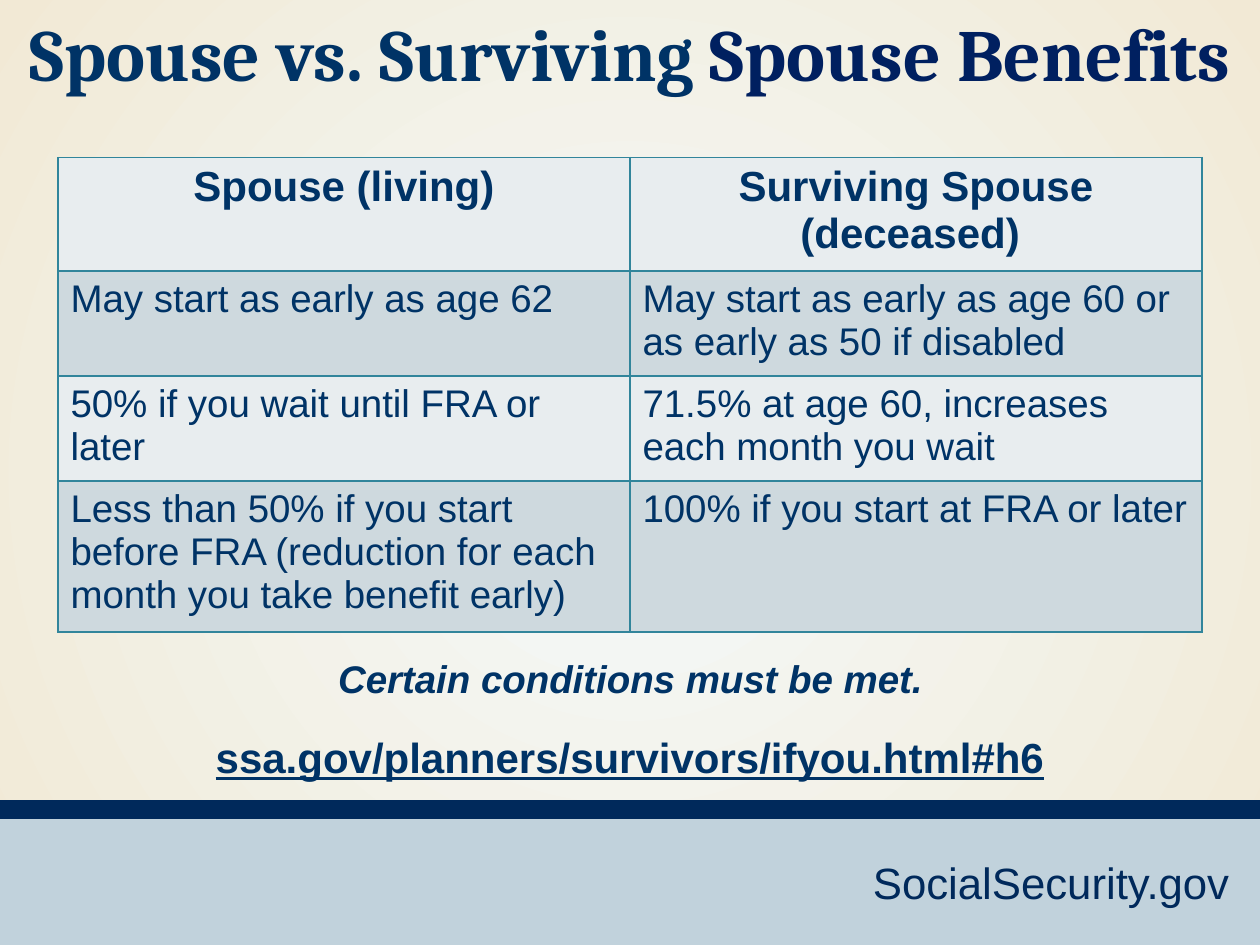
from pptx import Presentation
from pptx.dml.color import RGBColor
from pptx.enum.shapes import MSO_SHAPE
from pptx.enum.text import MSO_ANCHOR, PP_ALIGN
from pptx.oxml import parse_xml
from pptx.oxml.ns import nsdecls, qn
from pptx.util import Inches, Pt

COLORS = {
    "glow": "F3FAFB", "cream": "F2E9D5", "footer": "C1D2DC", "stripe": "00295B",
    "text": "003366", "title_end": "002060", "border": "31859B",
    "light": "E8EDEF", "dark": "CED9DE",
}


def rgb(name):
    return RGBColor.from_string(COLORS[name])


def write(frame, text, size=22, font="Arial", color="text", bold=False,
          italic=False, underline=False, align=PP_ALIGN.LEFT):
    frame.word_wrap = True
    paragraph = frame.paragraphs[0]
    paragraph.alignment = align
    run = paragraph.add_run()
    run.text = text
    run.font.size = Pt(size)
    run.font.name = font
    run.font.bold = bold
    run.font.italic = italic
    run.font.underline = underline
    run.font.color.rgb = rgb(color)


prs = Presentation()
prs.slide_width, prs.slide_height = Inches(10), Inches(7.5)
slide = prs.slides.add_slide(prs.slide_layouts[6])
shapes = slide.shapes

backdrop = slide.background.fill
backdrop.gradient()
for stop, color in zip(backdrop.gradient_stops, ("glow", "cream")):
    stop.color.rgb = rgb(color)
gradient = slide.element.find(".//" + qn("a:gradFill"))
gradient.replace(gradient.find(qn("a:lin")), parse_xml(
    f'<a:path {nsdecls("a")} path="circle">'
    '<a:fillToRect l="50000" t="50000" r="50000" b="50000"/></a:path>'))

for top, height, color in ((6.45, 1.05, "footer"), (6.35, 0.15, "stripe")):
    band = shapes.add_shape(MSO_SHAPE.RECTANGLE, 0, Inches(top), Inches(10), Inches(height))
    band.shadow.inherit = False
    band.fill.solid()
    band.fill.fore_color.rgb = rgb(color)
    band.line.fill.background()

site = shapes.add_textbox(Inches(6.83), Inches(6.74), Inches(3.07), Inches(0.52))
write(site.text_frame, "SocialSecurity.gov", size=25, color="stripe")

title = shapes.add_textbox(0, 0, Inches(10), Inches(0.82)).text_frame
title.vertical_anchor = MSO_ANCHOR.MIDDLE
for text, color in (("Spouse vs. Surviving ", "text"), ("Spouse Benefits", "title_end")):
    write(title, text, size=42, font="Cambria", color=color, bold=True, align=PP_ALIGN.CENTER)

comparison = [
    ("Spouse (living)", "Surviving Spouse (deceased) "),
    ("May start as early as age 62",
     "May start as early as age 60 or as early as 50 if disabled"),
    ("50% if you wait until FRA or later",
     "71.5% at age 60, increases each month you wait"),
    ("Less than 50% if you start before FRA (reduction for each month you take benefit early)",
     "100% if you start at FRA or later"),
]
row_heights = (0.85, 0.78, 0.78, 1.13)
benefits = shapes.add_table(len(comparison), 2, Inches(0.46), Inches(1.25),
                            Inches(9.08), Inches(sum(row_heights))).table
benefits.first_row = benefits.horz_banding = False
for r, (entries, height) in enumerate(zip(comparison, row_heights)):
    benefits.rows[r].height = Inches(height)
    header = r == 0
    for c, text in enumerate(entries):
        cell = benefits.cell(r, c)
        cell.fill.solid()
        cell.fill.fore_color.rgb = rgb("dark" if r % 2 else "light")
        write(cell.text_frame, text, size=24 if header else 22, bold=header,
              align=PP_ALIGN.CENTER if header else PP_ALIGN.LEFT)
        properties = cell._tc.get_or_add_tcPr()
        for position, side in enumerate("LRTB"):
            properties.insert(position, parse_xml(
                f'<a:ln{side} {nsdecls("a")} w="{Pt(1)}"><a:solidFill>'
                f'<a:srgbClr val="{COLORS["border"]}"/></a:solidFill></a:ln{side}>'))

condition = shapes.add_textbox(Inches(1.57), Inches(5.15), Inches(6.87), Inches(0.47))
write(condition.text_frame, "Certain conditions must be met.",
      bold=True, italic=True, align=PP_ALIGN.CENTER)

address = shapes.add_textbox(0, Inches(5.76), Inches(10), Inches(0.5))
write(address.text_frame, "ssa.gov/planners/survivors/ifyou.html#h6", size=24,
      bold=True, underline=True, align=PP_ALIGN.CENTER)

prs.save("out.pptx")
